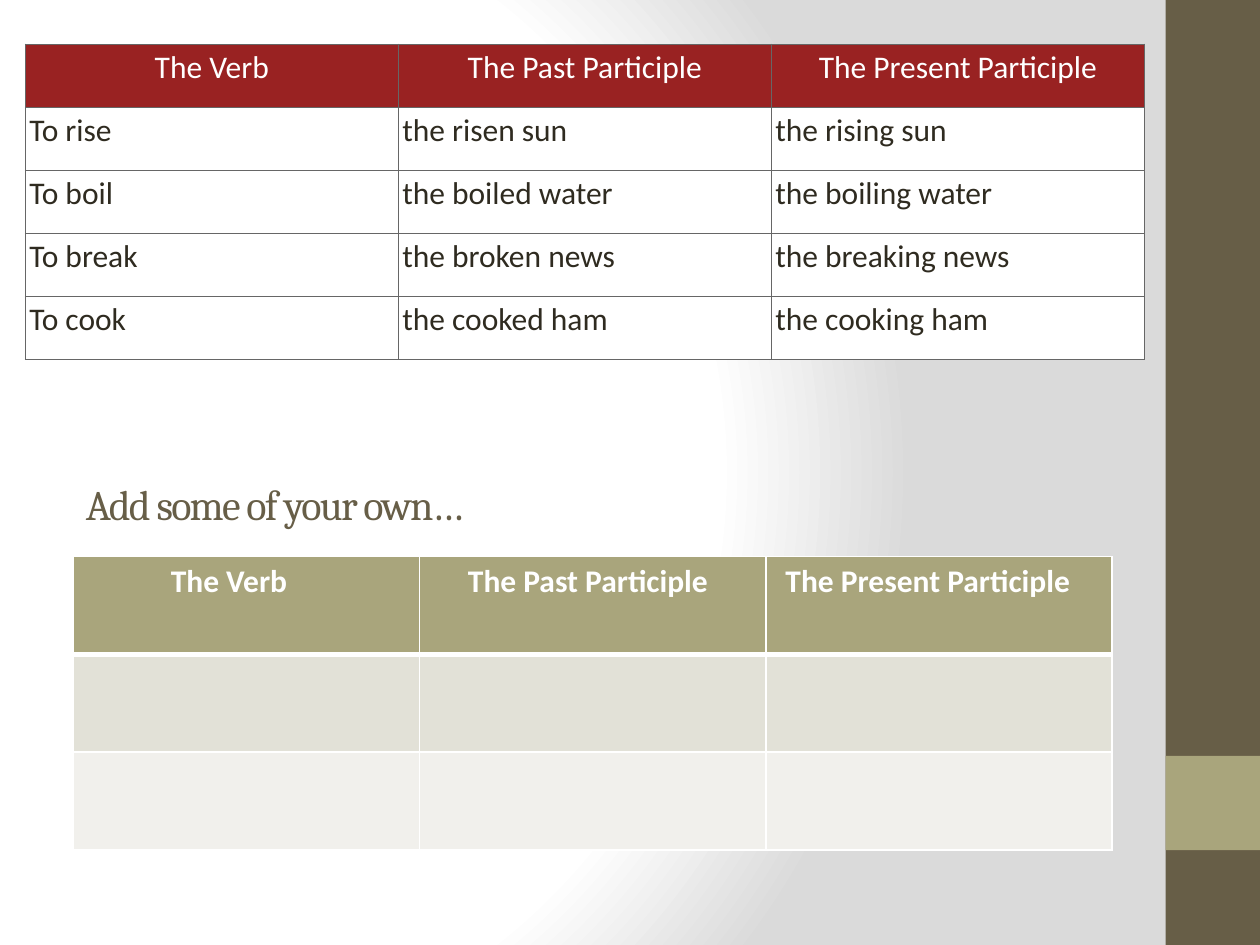
from lxml import etree
from pptx import Presentation
from pptx.dml.color import RGBColor
from pptx.enum.shapes import MSO_SHAPE
from pptx.enum.text import MSO_ANCHOR, PP_ALIGN
from pptx.oxml import parse_xml
from pptx.oxml.ns import nsdecls, qn
from pptx.util import Cm, Pt

RECT = MSO_SHAPE.RECTANGLE
MIDDLE = MSO_ANCHOR.MIDDLE
LEFT, CENTER = PP_ALIGN.LEFT, PP_ALIGN.CENTER

WHITE = RGBColor(0xFF, 0xFF, 0xFF)
SILVER = RGBColor(0xDA, 0xDA, 0xDA)
BROWN = RGBColor(0x67, 0x5E, 0x47)
OLIVE = RGBColor(0xA9, 0xA5, 0x7C)
RED = RGBColor(0x99, 0x22, 0x22)
INK = RGBColor(0x2F, 0x2B, 0x20)
GREY = RGBColor(0x66, 0x66, 0x66)
SAND = RGBColor(0xE2, 0xE1, 0xD7)
PALE = RGBColor(0xF1, 0xF0, 0xEC)

TITLE = "Add some of your own…"
HEADS = ["The Verb", "The Past Participle", "The Present Participle"]
VERBS = [
    ["To rise", "the risen sun", "the rising sun"],
    ["To boil", "the boiled water", "the boiling water"],
    ["To break", "the broken news", "the breaking news"],
    ["To cook", "the cooked ham", "the cooking ham"],
]
BLANKS = [[""] * 3, [""] * 3]
INDENTS = [1.71, 0.72, 0.14]
BARS = [(0, 19.05, BROWN), (15.24, 1.9, OLIVE)]  # top, height, colour
STOPS = [(0, WHITE), (75, WHITE), (100, SILVER)]


def write(frame, text, color=INK, size=18, font="Calibri", bold=False,
          align=LEFT, indent=0, track=0):
    para = frame.paragraphs[0]
    para.alignment = align
    if indent:
        props = para._p.get_or_add_pPr()
        props.set("marL", str(Cm(indent)))
        props.set("indent", "0")
    run = para.add_run()
    run.text = text
    run.font.name, run.font.size, run.font.bold = font, Pt(size), bold
    run.font.color.rgb = color
    if track:
        run._r.get_or_add_rPr().set("spc", str(track * 100))


def set_back(slide):
    """Fill the background with a radial gradient."""
    fill = slide.background.fill
    fill.gradient()
    grad = slide.background._cSld.find(".//" + qn("a:gradFill"))
    stops = "".join(
        f'<a:gs pos="{pos * 1000}"><a:srgbClr val="{color}"/></a:gs>'
        for pos, color in STOPS)
    fresh = parse_xml(
        f'<a:gradFill {nsdecls("a")} rotWithShape="1"><a:gsLst>{stops}</a:gsLst>'
        '<a:path path="circle"><a:fillToRect l="20000" t="50000" '
        'r="100000" b="50000"/></a:path></a:gradFill>')
    grad.getparent().replace(grad, fresh)


def set_edges(cell, color, widths):
    """Draw cell borders; widths maps each side (L, R, T, B) to points."""
    props = cell._tc.get_or_add_tcPr()
    for side, width in widths.items():
        line = etree.SubElement(props, qn(f"a:ln{side}"), w=str(Pt(width)))
        solid = etree.SubElement(line, qn("a:solidFill"))
        etree.SubElement(solid, qn("a:srgbClr"), val=str(color))


def add_grid(slide, left, top, wide, high, rows, fills, edge, weight, rule):
    """Add an even table; rule is the line width below its first row."""
    count = len(rows[0])
    table = slide.shapes.add_table(
        len(rows), count, Cm(left), Cm(top),
        Cm(wide * count), Cm(high * len(rows))).table
    table.first_row = table.horz_banding = False
    for col in table.columns:
        col.width = Cm(wide)
    for r, row in enumerate(table.rows):
        row.height = Cm(high)
        widths = dict.fromkeys("LRTB", weight)
        if r < 2:
            widths["BT"[r]] = rule
        for cell in row.cells:
            set_edges(cell, edge, widths)
            cell.fill.solid()
            cell.fill.fore_color.rgb = fills[r]
    return table


def main():
    deck = Presentation()
    deck.slide_width, deck.slide_height = Cm(25.4), Cm(19.05)
    slide = deck.slides.add_slide(deck.slide_layouts[6])
    set_back(slide)

    for top, high, color in BARS:
        bar = slide.shapes.add_shape(RECT, Cm(23.5), Cm(top), Cm(1.9), Cm(high))
        bar.shadow.inherit = False
        bar.fill.solid()
        bar.fill.fore_color.rgb = color
        bar.line.fill.background()

    frame = slide.shapes.add_textbox(
        Cm(1.48), Cm(9.1), Cm(12.5), Cm(2.12)).text_frame
    frame.word_wrap = True
    frame.vertical_anchor = MIDDLE
    write(frame, TITLE, color=BROWN, size=24, font="Cambria", track=-1)

    rows = [HEADS] + VERBS
    verbs = add_grid(slide, 0.51, 0.89, 7.52, 1.27, rows,
                     [RED] + [WHITE] * len(VERBS), GREY, 0.75, 0.75)
    for r, row in enumerate(rows):
        for c, text in enumerate(row):
            cell = verbs.cell(r, c)
            cell.margin_left = cell.margin_right = Cm(0.08)
            cell.margin_top = cell.margin_bottom = Cm(0.08)
            write(cell.text_frame, text, color=INK if r else WHITE,
                  align=LEFT if r else CENTER)

    blank = add_grid(slide, 1.48, 11.22, 6.98, 1.97, [HEADS] + BLANKS,
                     [OLIVE, SAND, PALE], WHITE, 1, 3)
    for c, (text, indent) in enumerate(zip(HEADS, INDENTS)):
        write(blank.cell(0, c).text_frame, text, color=WHITE, bold=True,
              indent=indent)

    deck.save("out.pptx")


if __name__ == "__main__":
    main()
